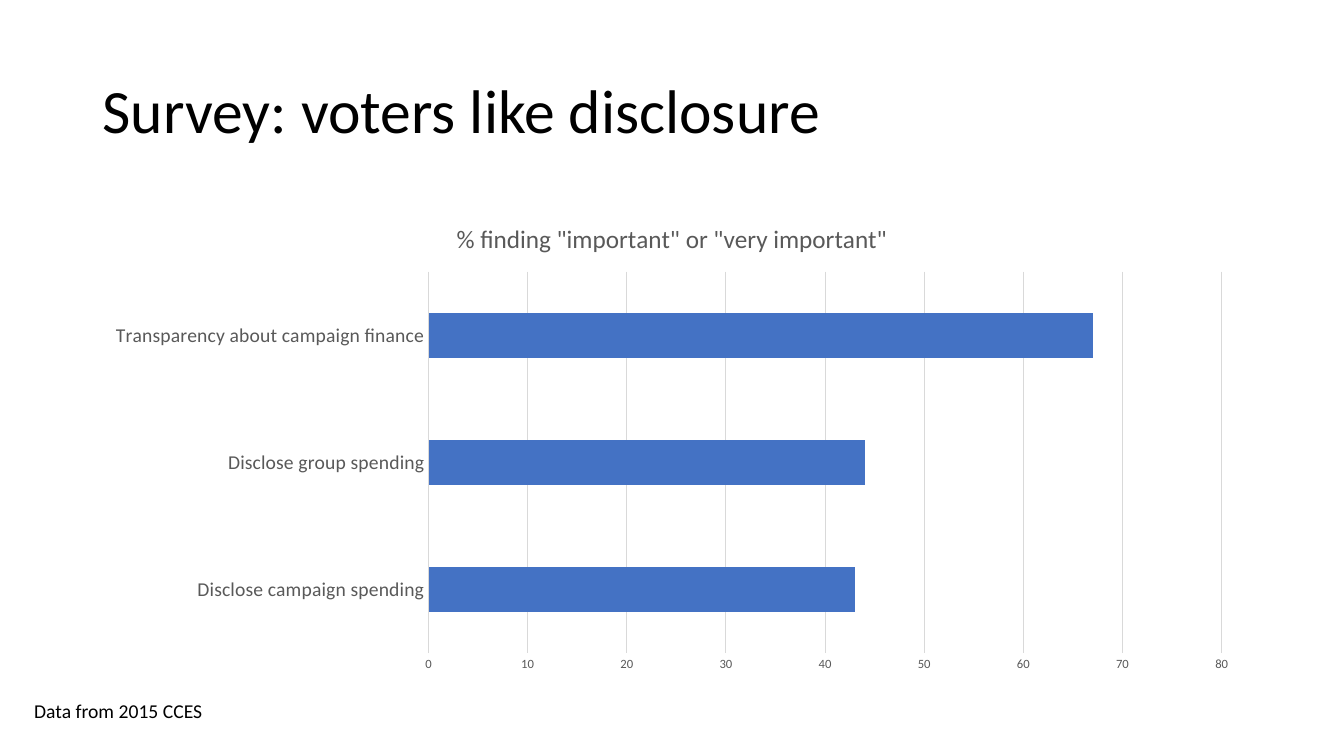
from pptx import Presentation
from pptx.chart.data import CategoryChartData
from pptx.dml.color import RGBColor
from pptx.enum.chart import XL_CHART_TYPE, XL_TICK_MARK
from pptx.enum.text import MSO_ANCHOR
from pptx.util import Inches, Pt

BAR_CLUSTERED = XL_CHART_TYPE.BAR_CLUSTERED
NO_TICKS = XL_TICK_MARK.NONE
TOP, MIDDLE = MSO_ANCHOR.TOP, MSO_ANCHOR.MIDDLE

TITLE = "Survey: voters like disclosure"
SOURCE_NOTE = "Data from 2015 CCES"
CHART_TITLE = '% finding "important" or "very important"'
SUPPORT = {
    "Disclose campaign spending": 43,
    "Disclose group spending": 44,
    "Transparency about campaign finance": 67,
}

FONT = "Calibri"
BLACK, GREY, GRID, BLUE = "000000", "595959", "D9D9D9", "4472C4"
WIDTH, HEIGHT = 13.33, 7.5
MARGIN = 0.92
CONTENT_WIDTH = WIDTH - 2 * MARGIN


def color(hex_code):
    return RGBColor.from_string(hex_code)


def style_font(font, size, hex_code):
    font.name = FONT
    font.size = Pt(size)
    font.bold = False
    font.color.rgb = color(hex_code)


def style_line(line, hex_code):
    line.color.rgb = color(hex_code)
    line.width = Pt(0.75)


def add_text(slide, text, box, size, anchor, line_spacing=1.0):
    frame = slide.shapes.add_textbox(*map(Inches, box)).text_frame
    frame.word_wrap = True
    frame.vertical_anchor = anchor
    frame.text = text
    paragraph = frame.paragraphs[0]
    paragraph.line_spacing = line_spacing
    style_font(paragraph.runs[0].font, size, BLACK)


def add_support_chart(slide, box):
    data = CategoryChartData()
    data.categories = list(SUPPORT)
    data.add_series("Series 1", list(SUPPORT.values()))
    chart = slide.shapes.add_chart(BAR_CLUSTERED, *map(Inches, box), data).chart
    style_font(chart.font, 10, BLACK)
    chart.has_legend = False

    chart.has_title = True
    heading = chart.chart_title.text_frame
    heading.text = CHART_TITLE
    style_font(heading.paragraphs[0].runs[0].font, 18, GREY)
    chart.chart_title.include_in_layout = False

    for axis, size in ((chart.category_axis, 14), (chart.value_axis, 9)):
        axis.major_tick_mark = axis.minor_tick_mark = NO_TICKS
        style_font(axis.tick_labels.font, size, GREY)
    style_line(chart.category_axis.format.line, GRID)
    values = chart.value_axis
    values.minimum_scale, values.maximum_scale, values.major_unit = 0, 80, 10
    values.format.line.fill.background()
    style_line(values.major_gridlines.format.line, GRID)

    plot = chart.plots[0]
    plot.gap_width = 182
    plot.vary_by_categories = False
    bars = plot.series[0].format.fill
    bars.solid()
    bars.fore_color.rgb = color(BLUE)


def main():
    deck = Presentation()
    deck.slide_width, deck.slide_height = Inches(WIDTH), Inches(HEIGHT)
    slide = deck.slides.add_slide(deck.slide_layouts[6])
    add_text(slide, TITLE, (MARGIN, 0.4, CONTENT_WIDTH, 1.45), 44, MIDDLE, 0.9)
    add_support_chart(slide, (MARGIN, 2, CONTENT_WIDTH, 4.76))
    add_text(slide, SOURCE_NOTE, (0.24, 6.88, 6.89, 0.34), 14, TOP)
    deck.save("out.pptx")


if __name__ == "__main__":
    main()
